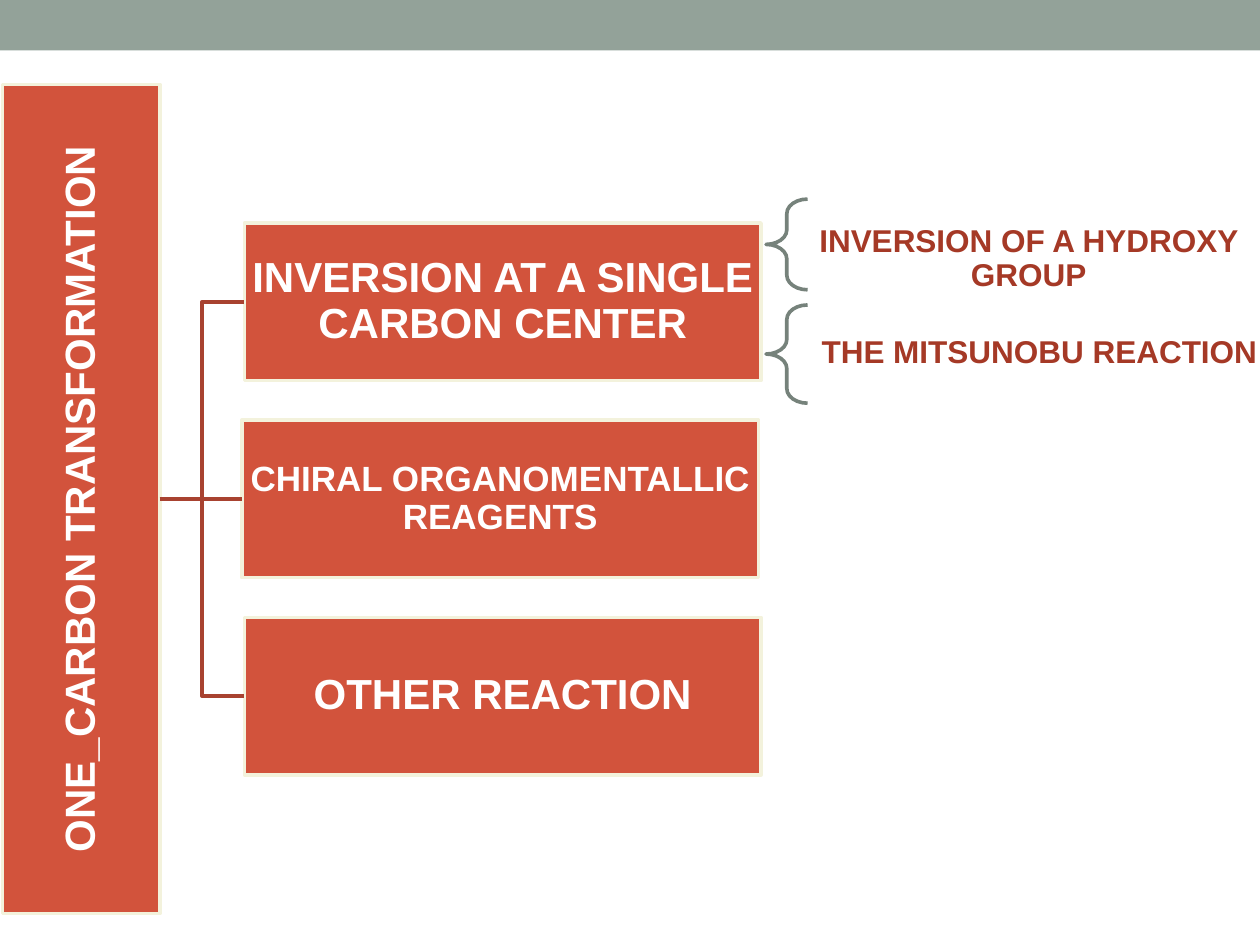
from pptx import Presentation
from pptx.dml.color import RGBColor
from pptx.enum.shapes import MSO_CONNECTOR, MSO_SHAPE
from pptx.enum.text import MSO_ANCHOR, PP_ALIGN
from pptx.oxml.ns import qn
from pptx.util import Inches, Pt
from lxml import etree

RECTANGLE, LEFT_BRACE = MSO_SHAPE.RECTANGLE, MSO_SHAPE.LEFT_BRACE
STRAIGHT, ELBOW = MSO_CONNECTOR.STRAIGHT, MSO_CONNECTOR.ELBOW
MIDDLE, CENTER = MSO_ANCHOR.MIDDLE, PP_ALIGN.CENTER
LEFT_SIDE, RIGHT_SIDE = 1, 3

SAGE = RGBColor(0x93, 0xA2, 0x99)
BRICK = RGBColor(0xD2, 0x53, 0x3C)
CREAM = RGBColor(0xF3, 0xF2, 0xDC)
RUST = RGBColor(0xA8, 0x42, 0x30)
DARK_RUST = RGBColor(0xA5, 0x39, 0x26)
SLATE = RGBColor(0x76, 0x82, 0x7B)
WHITE = RGBColor(0xFF, 0xFF, 0xFF)


class TreeSlide:
    columns, rows = 100, 75
    line_width = Pt(2.08)
    font = {"name": "Arial", "bold": True}

    def __init__(self, deck):
        self.cell_width = deck.slide_width / self.columns
        self.cell_height = deck.slide_height / self.rows
        self.page = deck.slides.add_slide(deck.slide_layouts[6])

    def place(self, column, row, width, height):
        return (round(column * self.cell_width), round(row * self.cell_height),
                round(width * self.cell_width), round(height * self.cell_height))

    def outline(self, shape, color):
        shape.line.color.rgb = color
        shape.line.width = self.line_width

    def caption(self, shape, text, size, color, side_inset, end_inset):
        frame = shape.text_frame
        layout = {"word_wrap": True, "vertical_anchor": MIDDLE,
                  "margin_left": side_inset, "margin_right": side_inset,
                  "margin_top": end_inset, "margin_bottom": end_inset}
        for name, value in layout.items():
            setattr(frame, name, value)
        para = frame.paragraphs[0]
        spacing = {"alignment": CENTER, "line_spacing": 0.9,
                   "space_after": Pt(0.35 * size)}
        for name, value in spacing.items():
            setattr(para, name, value)
        span = para.add_run()
        span.text = text
        for name, value in {**self.font, "size": Pt(size)}.items():
            setattr(span.font, name, value)
        span.font.color.rgb = color

    def band(self, *cells):
        shape = self.page.shapes.add_shape(RECTANGLE, *self.place(*cells))
        shape.shadow.inherit = False
        shape.fill.solid()
        shape.fill.fore_color.rgb = SAGE
        shape.line.fill.background()

    def box(self, text, size, *cells, upward=False):
        shape = self.page.shapes.add_shape(RECTANGLE, *self.place(*cells))
        shape.shadow.inherit = False
        shape.fill.solid()
        shape.fill.fore_color.rgb = BRICK
        self.outline(shape, CREAM)
        inset = Inches(0.02)
        self.caption(shape, text, size, WHITE, inset, inset)
        if upward:
            body = shape._element.txBody.find(qn("a:bodyPr"))
            body.set("vert", "vert270")
        return shape

    def branch(self, kind, parent, child):
        connector = self.page.shapes.add_connector(kind, 0, 0, 0, 0)
        connector.begin_connect(parent, RIGHT_SIDE)
        connector.end_connect(child, LEFT_SIDE)
        self.outline(connector, RUST)
        etree.SubElement(connector._element.spPr, qn("a:effectLst"))

    def label(self, text, *cells):
        shape = self.page.shapes.add_textbox(*self.place(*cells))
        self.caption(shape, text, 18, DARK_RUST, Inches(0.14), Inches(0.05))

    def brace(self, *cells):
        shape = self.page.shapes.add_shape(LEFT_BRACE, *self.place(*cells))
        shape.shadow.inherit = False
        shape.fill.background()
        self.outline(shape, SLATE)
        shape.adjustments[0] = 0.35
        shape.adjustments[1] = 0.5


def main():
    deck = Presentation()
    deck.slide_width, deck.slide_height = Inches(10), Inches(7.5)
    tree = TreeSlide(deck)
    tree.band(0, 0, 100, 4)

    box_depth, box_step, first_row = 12.5, 15.65, 17.7
    middle_row = first_row + box_step + box_depth / 2
    root_height = 65.8
    root = tree.box("ONE_CARBON TRANSFORMATION", 24, 0.2,
                    middle_row - root_height / 2, box_depth, root_height,
                    upward=True)

    topics = [
        ("INVERSION AT A SINGLE CARBON CENTER", 24, 19.4, ELBOW),
        ("CHIRAL ORGANOMENTALLIC REAGENTS", 20, 19.2, STRAIGHT),
        ("OTHER REACTION", 24, 19.4, ELBOW),
    ]
    for index, (text, size, column, kind) in enumerate(topics):
        child = tree.box(text, size, column, first_row + index * box_step,
                         41, box_depth)
        tree.branch(kind, root, child)

    details = [
        ("INVERSION OF A HYDROXY GROUP", (63.3, 16.7, 36.7, 7.8), (15.8, 7.2)),
        ("THE MITSUNOBU REACTION", (62.5, 25, 40, 6.1), (24.2, 7.8)),
    ]
    for text, cells, (row, height) in details:
        tree.label(text, *cells)
        tree.brace(60.8, row, 3.3, height)

    deck.save("out.pptx")


if __name__ == "__main__":
    main()
